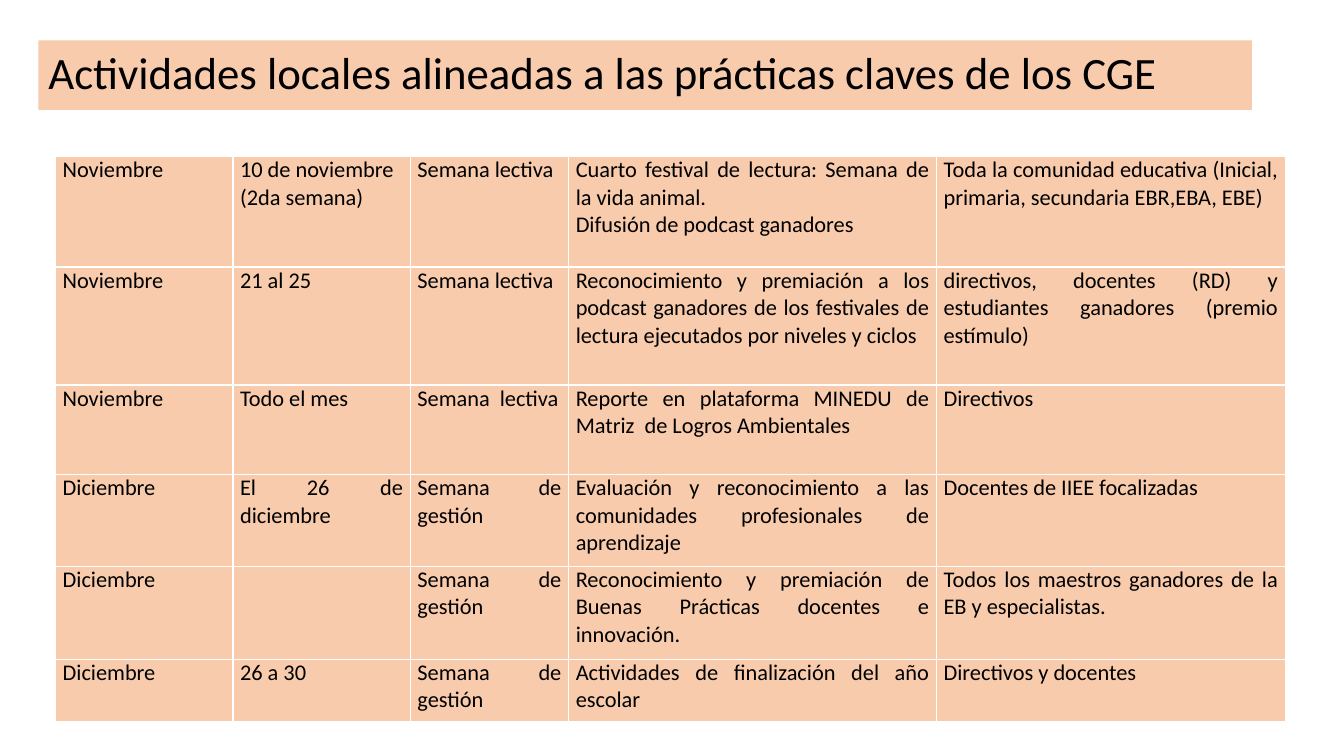
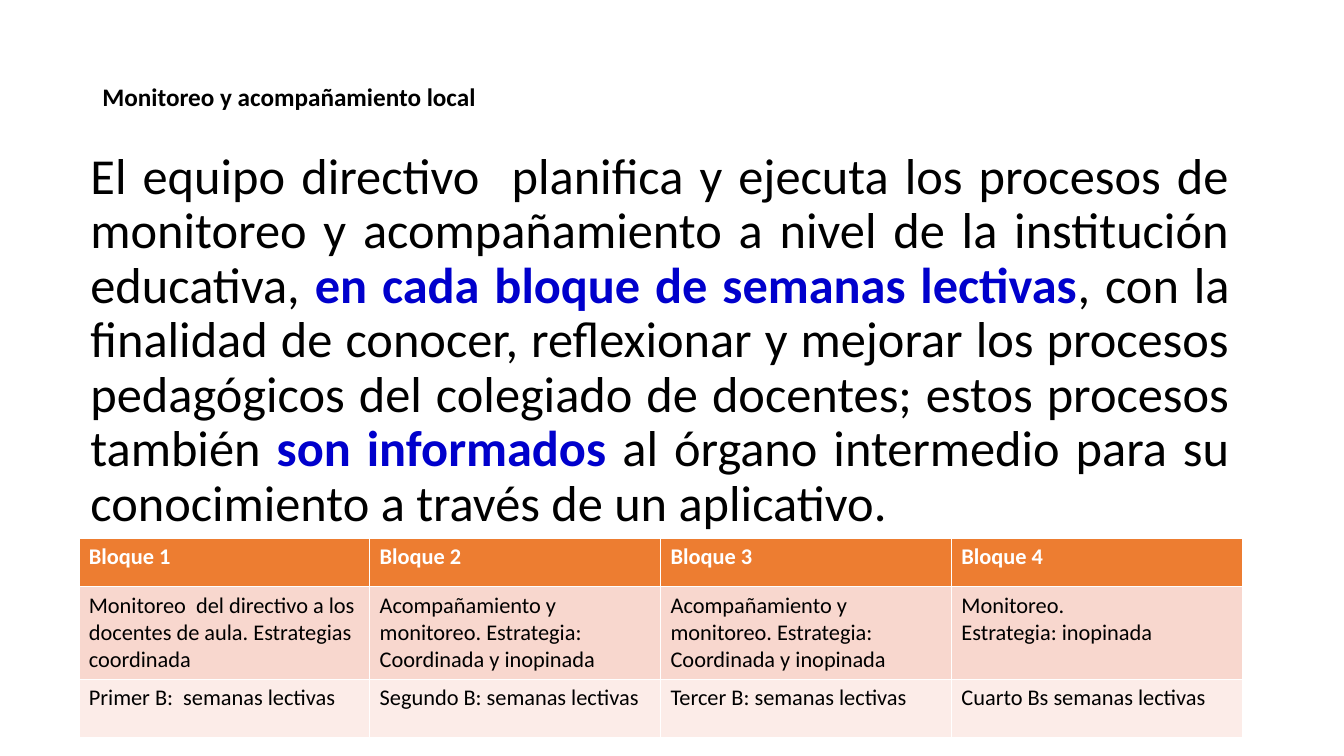
"""Build two slides on local school activities and monitoring."""
from dataclasses import dataclass

from pptx import Presentation
from pptx.dml.color import RGBColor
from pptx.enum import shapes, text
from pptx.util import Cm, Pt


@dataclass(frozen=True)
class Theme:
    """Colours, font and type sizes of the deck."""
    font: str = "Calibri"
    ink: str = "000000"
    paper: str = "FFFFFF"
    accent: str = "0000CC"
    peach: str = "F8CBAD"
    header: str = "ED7D31"
    band_dark: str = "F8D7CE"
    band_light: str = "FCECE8"
    title: int = 32
    subtitle: int = 18
    body: int = 36
    cell: int = 16


T = Theme()
JUSTIFY = text.PP_ALIGN.JUSTIFY
LEFT = text.PP_ALIGN.LEFT

ACTIVITIES = [
    ["Noviembre", "10 de noviembre\n(2da semana)", "Semana lectiva",
     "Cuarto festival de lectura: Semana de la vida animal.\n"
     "Difusión de podcast ganadores",
     "Toda la comunidad educativa (Inicial, primaria, secundaria EBR,EBA, EBE)"],
    ["Noviembre", "21 al 25", "Semana lectiva",
     "Reconocimiento y premiación a los podcast ganadores de los festivales "
     "de lectura ejecutados por niveles y ciclos",
     "directivos, docentes (RD) y estudiantes ganadores (premio estímulo)"],
    ["Noviembre", "Todo el mes", "Semana  lectiva",
     "Reporte en plataforma MINEDU de Matriz  de Logros Ambientales",
     "Directivos"],
    ["Diciembre", "El 26 de diciembre", "Semana de gestión",
     "Evaluación y reconocimiento a las comunidades profesionales de aprendizaje",
     "Docentes de IIEE focalizadas"],
    ["Diciembre", "", "Semana de gestión",
     "Reconocimiento y premiación de Buenas Prácticas docentes e innovación.",
     "Todos los maestros ganadores de la EB y especialistas."],
    ["Diciembre", "26 a 30", "Semana de gestión",
     "Actividades de finalización del año escolar", "Directivos y docentes"],
]

MONITORING = (
    "El equipo directivo  planifica y ejecuta los procesos de monitoreo y "
    "acompañamiento a nivel de la institución educativa, *en cada bloque de "
    "semanas lectivas*, con la finalidad de conocer, reflexionar y mejorar los "
    "procesos pedagógicos del colegiado de docentes; estos procesos también "
    "*son informados *al órgano intermedio para su conocimiento a través de un "
    "aplicativo.")

SHARED_STRATEGY = "Acompañamiento y monitoreo. Estrategia: Coordinada y inopinada"
BLOCKS = [
    [f"Bloque {n}" for n in range(1, 5)],
    ["Monitoreo  del directivo a los docentes de aula. Estrategias coordinada",
     SHARED_STRATEGY, SHARED_STRATEGY, "Monitoreo.\nEstrategia: inopinada"],
    ["Primer B:  semanas lectivas", "Segundo B: semanas lectivas",
     "Tercer B: semanas lectivas", "Cuarto Bs semanas lectivas"],
]


def write(tf, content, size=T.cell, color=T.ink, bold=False, align=LEFT, spacing=None):
    """Write one paragraph per line, with *marked* pieces in the accent style."""
    for i, line in enumerate(content.split("\n")):
        p = tf.paragraphs[0] if i == 0 else tf.add_paragraph()
        p.alignment = align
        p.line_spacing = spacing
        for j, piece in enumerate(line.split("*")):
            marked = j % 2 == 1
            r = p.add_run()
            r.text = piece
            r.font.name = T.font
            r.font.size = Pt(size)
            r.font.bold = bold or marked
            r.font.color.rgb = RGBColor.from_string(T.accent if marked else color)


def add_text(s, box, content, fill=None, anchor=text.MSO_ANCHOR.MIDDLE, **fmt):
    """Add a wrapped text block, on a filled band when a fill is given."""
    area = [Cm(v) for v in box]
    if fill:
        sp = s.shapes.add_shape(shapes.MSO_SHAPE.RECTANGLE, *area)
        sp.shadow.inherit = False
        sp.fill.solid()
        sp.fill.fore_color.rgb = RGBColor.from_string(fill)
        sp.line.fill.background()
    else:
        sp = s.shapes.add_textbox(*area)
    tf = sp.text_frame
    tf.word_wrap = True
    tf.vertical_anchor = anchor
    write(tf, content, spacing=0.9, **fmt)


def add_table(s, left, top, widths, heights, rows, fills, header=False,
              margins=(0.25, 0.13), **fmt):
    """Add a table with one fill per row and an optional header row."""
    table = s.shapes.add_table(len(rows), len(widths), Cm(left), Cm(top),
                               Cm(sum(widths)), Cm(sum(heights))).table
    table.first_row = header
    table.horz_banding = False
    for column, width in zip(table.columns, widths):
        column.width = Cm(width)
    for i, (row, height) in enumerate(zip(table.rows, heights)):
        row.height = Cm(height)
        is_header = header and i == 0
        for cell, content in zip(row.cells, rows[i]):
            cell.margin_left = cell.margin_right = Cm(margins[0])
            cell.margin_top = cell.margin_bottom = Cm(margins[1])
            cell.fill.solid()
            cell.fill.fore_color.rgb = RGBColor.from_string(fills[i])
            write(cell.text_frame, content, bold=is_header,
                  color=T.paper if is_header else T.ink, **fmt)


def build_activities(s):
    """Fill the slide of local activities."""
    add_table(s, 1.4, 3.94, [4.47, 4.47, 3.99, 9.27, 8.79],
              [2.79, 2.97, 2.26, 2.31, 2.34, 1.57], ACTIVITIES,
              [T.peach] * len(ACTIVITIES), margins=(0.18, 0), align=JUSTIFY)
    add_text(s, (0.97, 1.02, 30.58, 1.75),
             "Actividades locales alineadas a las prácticas claves de los CGE",
             fill=T.peach, size=T.title, align=JUSTIFY)


def build_monitoring(s):
    """Fill the slide of local monitoring."""
    add_text(s, (2.33, 1.02, 29.21, 2.9), "Monitoreo y acompañamiento local",
             size=T.subtitle, bold=True)
    add_text(s, (2.03, 3.68, 29.21, 12.09), MONITORING,
             anchor=text.MSO_ANCHOR.TOP, size=T.body, align=JUSTIFY)
    add_table(s, 1.99, 13.56, [7.33] * 4, [1.22, 2.34, 1.47], BLOCKS,
              [T.header, T.band_dark, T.band_light], header=True)


def main():
    """Build and save the presentation."""
    prs = Presentation()
    prs.slide_width, prs.slide_height = Cm(33.87), Cm(19.05)
    for build in (build_activities, build_monitoring):
        build(prs.slides.add_slide(prs.slide_layouts[6]))
    prs.save("out.pptx")


if __name__ == "__main__":
    main()
